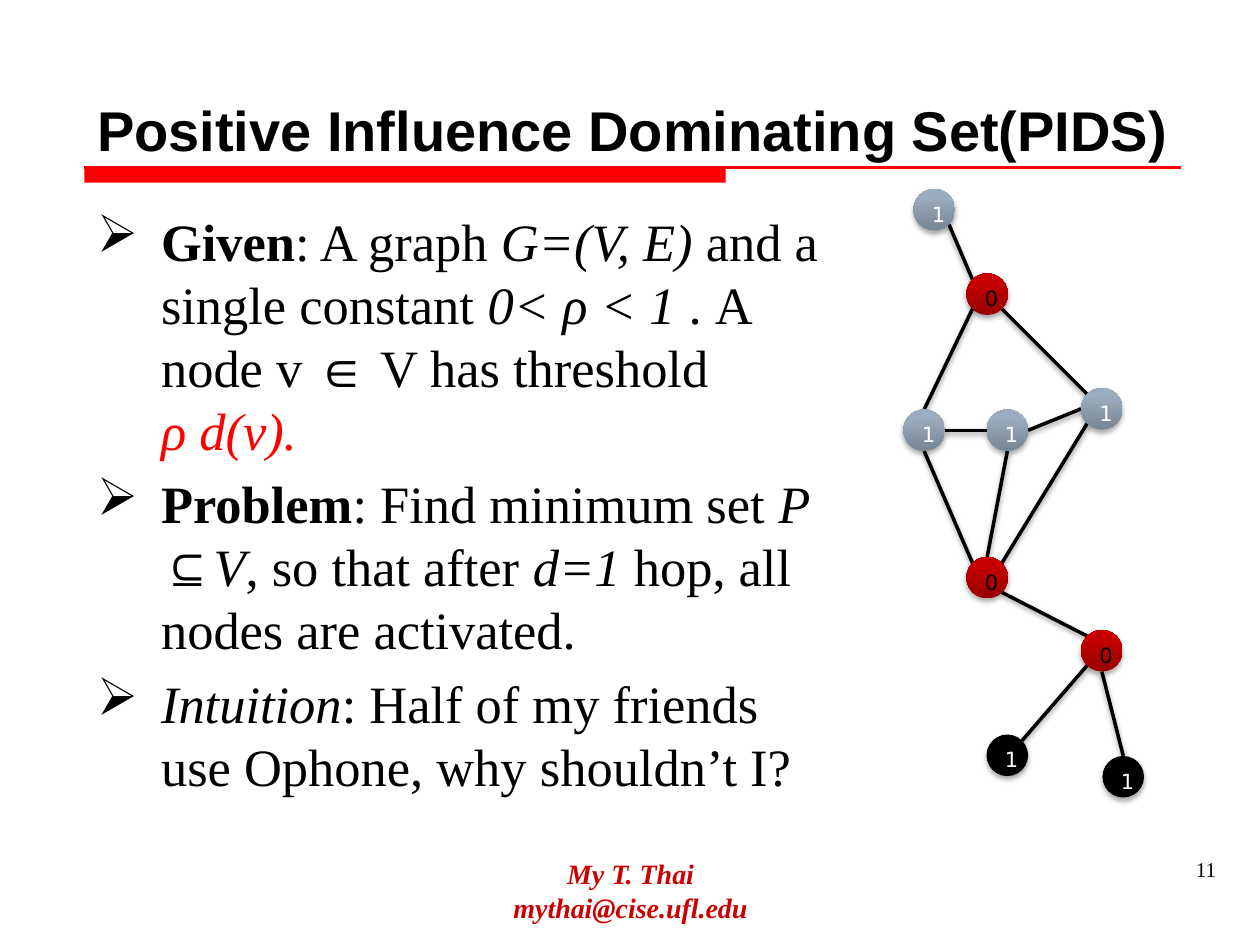
from dataclasses import dataclass
from math import cos, radians, sin

from lxml import etree
from pptx import Presentation
from pptx.dml.color import RGBColor
from pptx.enum.shapes import MSO_CONNECTOR, MSO_SHAPE
from pptx.enum.text import MSO_ANCHOR, MSO_AUTO_SIZE, PP_ALIGN
from pptx.oxml.ns import qn
from pptx.util import Inches, Pt

LEFT, MID, RIGHT = PP_ALIGN.LEFT, PP_ALIGN.CENTER, PP_ALIGN.RIGHT
SERIF = "Times New Roman"
BLACK, WHITE, RED, DARK = "000000", "FFFFFF", "FF0000", "CC0000"
SIZE = 0.33
ANGLES = {"e": 0, "se": 45, "s": 90, "sw": 135,
          "w": 180, "nw": 225, "n": 270, "ne": 315}


@dataclass
class Kind:
    low: str
    high: str
    ink: str


@dataclass
class Node:
    x: float
    y: float
    text: str
    kind: Kind

    def site(self, side: str) -> tuple[float, float]:
        """Point on the rim in a compass direction."""
        turn, r = radians(ANGLES[side]), SIZE / 2
        return self.x + r + r * cos(turn), self.y + r + r * sin(turn)


@dataclass
class Run:
    text: str
    bold: bool = False
    italic: bool = False
    color: str = BLACK


GREY = Kind("768593", "9AACBF", WHITE)
SEED = Kind("980000", "C60000", BLACK)
DONE = Kind(BLACK, BLACK, WHITE)

NODES = {
    "a": Node(7.25, 1.5, "1", GREY),
    "b": Node(7.67, 2.17, "0", SEED),
    "c": Node(7.17, 3.25, "1", GREY),
    "d": Node(7.83, 3.25, "1", GREY),
    "e": Node(8.58, 3.08, "1", GREY),
    "f": Node(7.67, 4.42, "0", SEED),
    "g": Node(8.58, 5, "0", SEED),
    "h": Node(7.83, 5.83, "1", DONE),
    "i": Node(8.75, 6, "1", DONE),
}
EDGES = [
    ("f", "se", "g", "nw"), ("f", "ne", "e", "sw"), ("e", "nw", "b", "se"),
    ("c", "n", "b", "sw"), ("c", "s", "f", "nw"), ("b", "nw", "a", "se"),
    ("c", "e", "d", "w"), ("d", "e", "e", "w"), ("d", "s", "f", "n"),
    ("g", "sw", "h", "ne"), ("g", "s", "i", "n"),
]
POINTS = [
    [Run("Given", bold=True), Run(": A graph "), Run("G=(V, E)", italic=True),
     Run(" and a single constant "), Run("0< ρ < 1", italic=True),
     Run(" . A node v ∈ V has threshold\v"),
     Run("ρ d(v).", italic=True, color=RED)],
    [Run("Problem", bold=True), Run(": Find minimum set "),
     Run("P ⊆V", italic=True), Run(", so that after "),
     Run("d=1", italic=True), Run(" hop, all nodes are activated.")],
    [Run("Intuition", italic=True),
     Run(": Half of my friends use Ophone, why shouldn’t I?")],
]


def rgb(code: str) -> RGBColor:
    return RGBColor.from_string(code)


def style(font, name: str, size: float, color: str) -> None:
    font.name, font.size = name, Pt(size)
    font.color.rgb = rgb(color)


def shade(props, alpha: int, dist: float) -> None:
    """Put a soft shadow below a shape or line."""
    effects = props.find(qn("a:effectLst"))
    if effects is None:
        effects = etree.SubElement(props, qn("a:effectLst"))
    outer = etree.SubElement(effects, qn("a:outerShdw"), blurRad=str(Pt(3.1)),
                             dist=str(Pt(dist)), dir="5400000", rotWithShape="0")
    tint = etree.SubElement(outer, qn("a:srgbClr"), val=BLACK)
    etree.SubElement(tint, qn("a:alpha"), val=str(alpha * 1000))


def add_line(slide, start, end, color: str, width: float):
    line = slide.shapes.add_connector(
        MSO_CONNECTOR.STRAIGHT, *map(Inches, (*start, *end)))
    line.line.color.rgb = rgb(color)
    line.line.width = Pt(width)
    etree.SubElement(line._element.spPr, qn("a:effectLst"))
    return line


def add_node(slide, node: Node) -> None:
    dot = slide.shapes.add_shape(
        MSO_SHAPE.OVAL, *map(Inches, (node.x, node.y, SIZE, SIZE)))
    kind = node.kind
    if kind.low == kind.high:
        dot.fill.solid()
        dot.fill.fore_color.rgb = rgb(kind.low)
    else:
        dot.fill.gradient()
        dot.fill.gradient_angle = 90
        low, high = dot.fill.gradient_stops
        low.color.rgb, high.color.rgb = rgb(kind.low), rgb(kind.high)
        high.position = 0.8
    dot.line.fill.background()
    dot.shadow.inherit = False
    shade(dot._element.spPr, 35, 1.8)
    frame = dot.text_frame
    frame.vertical_anchor = MSO_ANCHOR.TOP
    para = frame.paragraphs[0]
    para.text, para.alignment = node.text, LEFT
    style(para.font, "DejaVu Sans", 12, kind.ink)


def add_box(slide, x: float, y: float, w: float, h: float):
    frame = slide.shapes.add_textbox(*map(Inches, (x, y, w, h))).text_frame
    frame.word_wrap = True
    return frame


def add_title(slide) -> None:
    title = slide.shapes.title
    title.left, title.top, title.width, title.height = map(
        Inches, (0.67, 0.34, 8.75, 1))
    frame = title.text_frame
    frame.auto_size = MSO_AUTO_SIZE.NONE
    frame.vertical_anchor = MSO_ANCHOR.BOTTOM
    para = frame.paragraphs[0]
    para.text, para.alignment = "Positive Influence Dominating Set(PIDS)", LEFT
    style(para.font, "Arial", 32, BLACK)
    para.font.bold = True


def add_rule(slide) -> None:
    bar = slide.shapes.add_shape(
        MSO_SHAPE.RECTANGLE, *map(Inches, (0.67, 1.33, 5.09, 0.12)))
    bar.fill.solid()
    bar.fill.fore_color.rgb = rgb(RED)
    bar.line.fill.background()
    bar.shadow.inherit = False
    add_line(slide, (0.67, 1.33), (9.37, 1.33), RED, 1.5)


def add_points(slide) -> None:
    frame = add_box(slide, 0.67, 1.61, 6, 5.47)
    for i, runs in enumerate(POINTS):
        para = frame.add_paragraph() if i else frame.paragraphs[0]
        props = para._p.get_or_add_pPr()
        props.set("marL", str(Inches(0.51)))
        props.set("indent", str(-Inches(0.51)))
        tint = etree.SubElement(props, qn("a:buClr"))
        etree.SubElement(tint, qn("a:srgbClr"), val=BLACK)
        etree.SubElement(props, qn("a:buChar"), char="➢")
        para.line_spacing = Pt(36)
        para.space_before = Pt(6 if i else 0)
        style(para.font, SERIF, 30, BLACK)
        for part in runs:
            text, *rest = part.text.split("\v")
            run = para.add_run()
            run.text = text
            style(run.font, SERIF, 30, part.color)
            run.font.bold, run.font.italic = part.bold, part.italic
            if rest:
                para.add_line_break()


def add_foot(slide) -> None:
    frame = add_box(slide, 3.42, 6.75, 3.17, 0.52)
    frame.text = "My T. Thai\nmythai@cise.ufl.edu"
    for para in frame.paragraphs:
        para.alignment = MID
        style(para.font, SERIF, 16, DARK)
        para.font.bold = para.font.italic = True
    para = add_box(slide, 7.58, 6.75, 2.17, 0.52).paragraphs[0]
    para.text, para.alignment = "11", RIGHT
    style(para.font, SERIF, 12, BLACK)


def main() -> None:
    deck = Presentation()
    deck.slide_width, deck.slide_height = Inches(10), Inches(7.5)
    slide = deck.slides.add_slide(deck.slide_layouts[5])
    add_rule(slide)
    add_title(slide)
    add_points(slide)
    add_foot(slide)
    for a, out, b, into in EDGES:
        edge = add_line(slide, NODES[a].site(out), NODES[b].site(into), BLACK, 2)
        shade(edge._element.spPr, 38, 1.6)
    for node in NODES.values():
        add_node(slide, node)
    deck.save("out.pptx")


if __name__ == "__main__":
    main()
